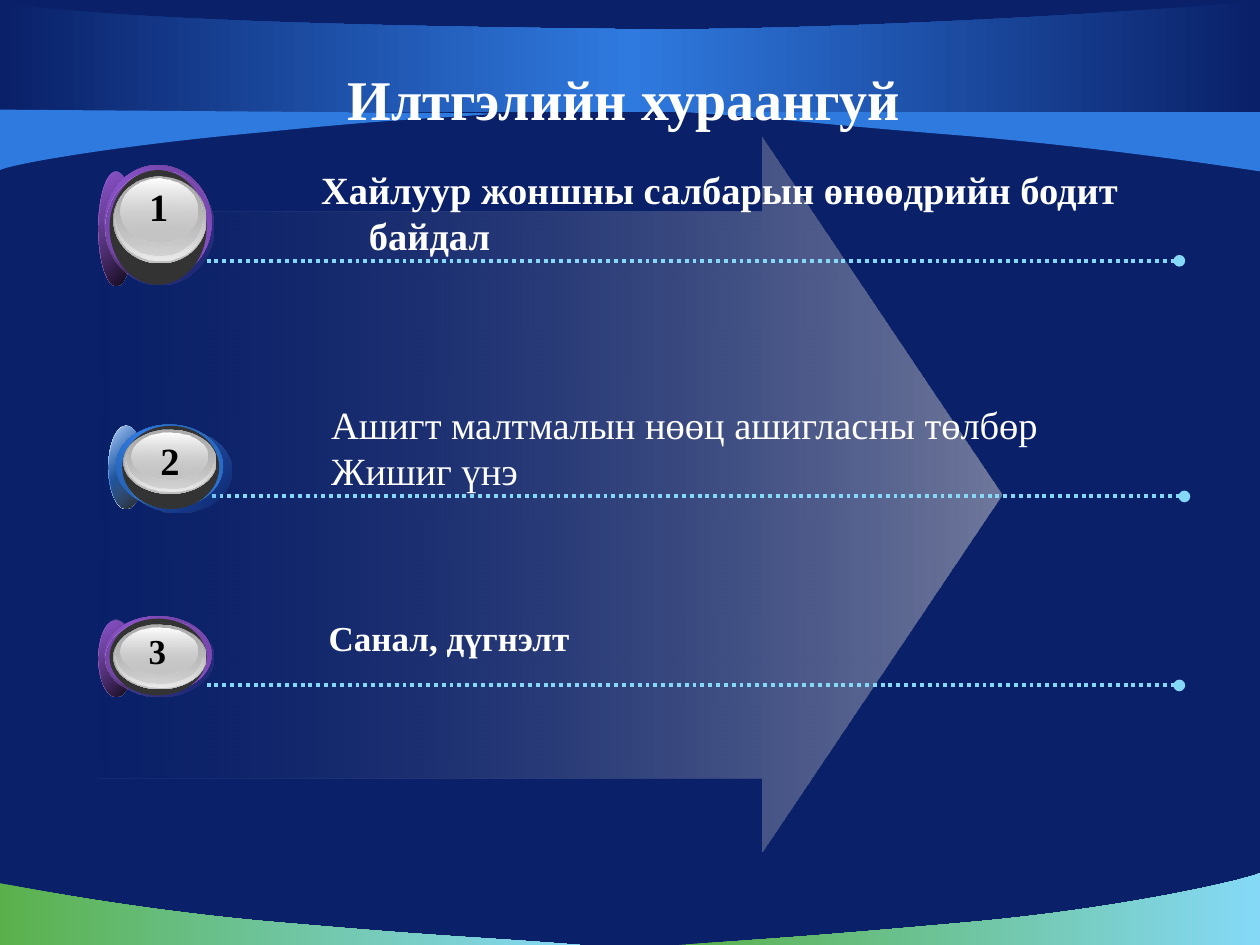
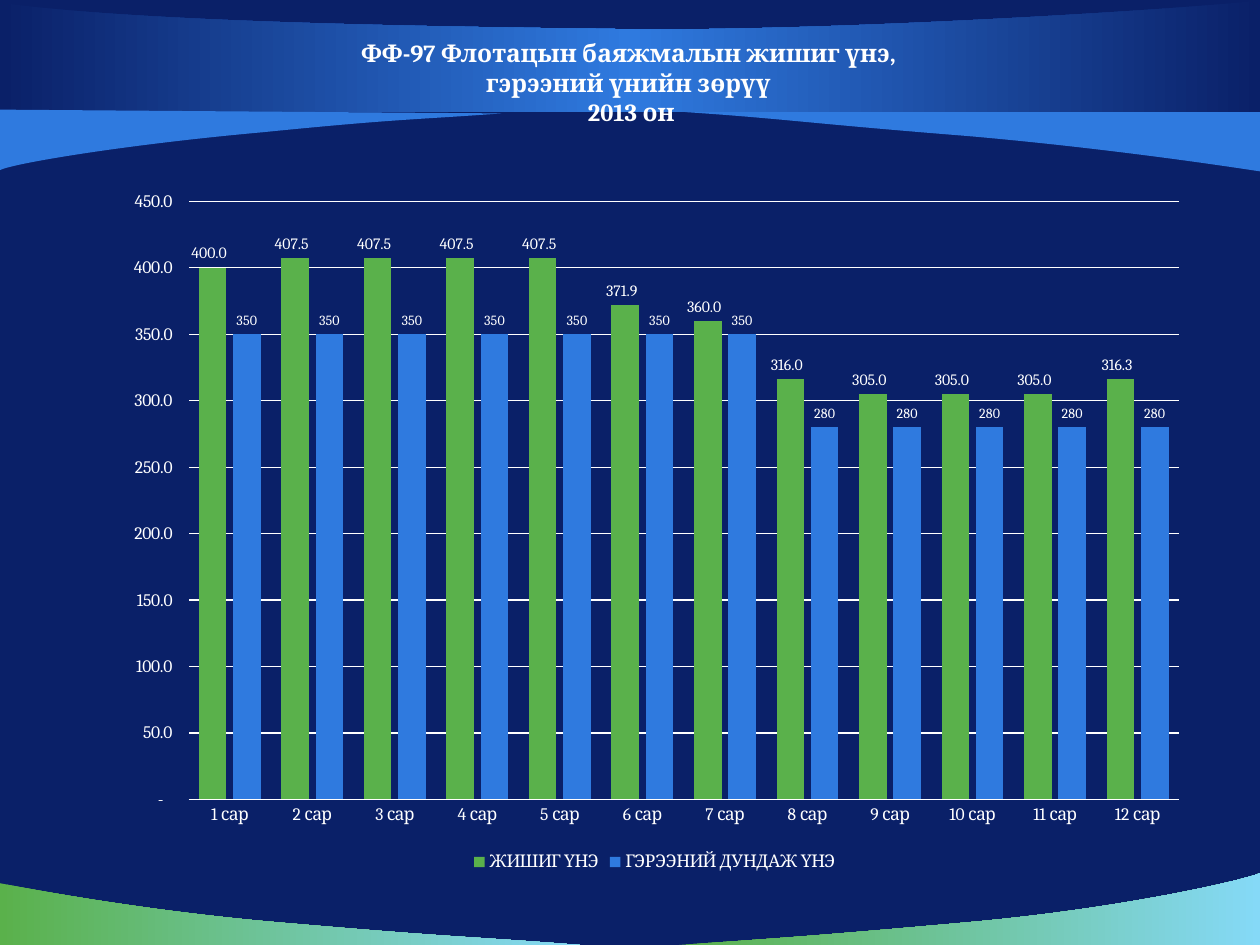
"""Build two slides: a three-step outline and a monthly price chart."""
from lxml import etree
from pptx import Presentation
from pptx import util as u
from pptx.chart import data as cd
from pptx.dml import color
from pptx.enum import chart as ch
from pptx.enum import dml, shapes, text
from pptx.oxml import ns

NAVY, BLUE, GREEN, SKY = "0A2068", "2F7ADF", "5AB14B", "85D9F7"
WHITE, BLACK, COAL = "FFFFFF", "000000", "333333"
PLUM, SILVER = "8A52C8", "C0C0C0"
SERIF, BOOK = "Times New Roman", "Cambria"

LEAF = [(0, GREEN), (100, SKY)]
SHEEN = [(0, NAVY), (50, BLUE), (100, NAVY)]
BANDS = [
    (LEAF, [(4.6, 7.5), (3.84, 7.44, 3.58, 7.44, 2.32, 7.33),
            (1.06, 7.23, 0.01, 7.01, 0, 7.01), (0, 7.5)]),
    (LEAF, [(5.39, 7.5), (6.14, 7.45, 6.46, 7.43, 7.69, 7.32),
            (8.92, 7.21, 9.9, 6.98, 10, 6.93), (10, 7.5)]),
    (BLUE, [(5.44, 0.89), (6.2, 0.94, 6.42, 0.98, 7.68, 1.08),
            (8.94, 1.19, 9.99, 1.36, 10, 1.36), (10, 0.88)]),
    (SHEEN, [(0, 0.89), (10, 0.89), (10, 0), (9.64, 0.06, 6.53, 0.26, 4.87, 0.23),
             (3.21, 0.21, 1.01, 0.17, 0, 0.02)]),
    (BLUE, [(3.98, 0.9), (3.31, 0.95, 3.18, 0.94, 2.08, 1.05),
            (0.97, 1.15, 0.09, 1.3, 0, 1.35), (0, 0.87)]),
]

PURPLE = {"edge": ([(0, PLUM), (100, "633B8F")], 90), "hue": PLUM,
          "rim": "6A3F99", "shade": "7143A4"}
AZURE = {"edge": ([(0, WHITE), (50, BLUE), (100, WHITE)], 45), "hue": BLUE,
         "rim": "245DAB", "shade": "2764B7"}

FACE = [
    (0.12, 0, 0.74, 1, [(0, "898989"), (100, SILVER)]),
    (0.13, 0, 0.72, 0.97, [(0, SILVER, 0), (100, "EBEBEB")]),
    (0.14, 0, 0.69, 0.91, [(0, "AEAEAE"), (100, SILVER, 48)]),
    (0.18, 0.02, 0.61, 0.73, [(0, WHITE), (100, SILVER, 38)]),
]

ROWS = [
    {"dots": (1.64, 2.07), "box": (1.95, 1.27, 7.81, 1.15), "hang": (0.88, -0.38),
     "lines": ["Хайлуур жоншны салбарын өнөөдрийн бодит байдал"], "size": 22, "bold": True,
     "ball": (0.78, 1.36, 0.91, 0.69), "tone": PURPLE,
     "rings": [(0.05, -0.05), (0.06, -0.01), (0.09, -0.01)], "drop": 0.04,
     "digit": (1.08, 1.4, 0.36, 0.65)},
    {"dots": (1.68, 3.94), "box": (2.03, 3.13, 7.47, 0.84), "hang": (0.5, 0),
     "lines": ["Ашигт малтмалын нөөц ашигласны төлбөр", "Жишиг үнэ"], "size": 22, "bold": False,
     "ball": (0.86, 3.38, 0.66, 0.51), "tone": AZURE,
     "rings": [(0.06, -0.01), (0.13, 0.03), (0.11, 0)], "drop": 0.03,
     "digit": (1.17, 3.42, 0.36, 0.47)},
    {"dots": (1.64, 5.44), "box": (2.01, 4.84, 6.99, 0.44), "hang": (0.88, -0.38),
     "lines": ["Санал, дүгнэлт"], "size": 20, "bold": True,
     "ball": (0.78, 4.92, 0.61, 0.51), "tone": PURPLE,
     "rings": [(0.05, -0.03), (0.06, 0), (0.09, -0.01)], "drop": 0.04,
     "digit": (1.08, 4.95, 0.34, 0.44)},
]

MONEY = '_-* #,##0.0_₮_-;\\-* #,##0.0_₮_-;_-* "-"?_₮_-;_-@_-'
SERIES = [
    ("ЖИШИГ ҮНЭ", [400] + [407.5] * 4 + [371.9, 360, 316] + [305] * 3 + [316.3],
     GREEN, 9, MONEY),
    ("ГЭРЭЭНИЙ ДУНДАЖ ҮНЭ", [350] * 7 + [280] * 5, BLUE, 8, "General"),
]


def rgb(code):
    """Turn a hex string into a colour."""
    return color.RGBColor.from_string(code)


def inch(*nums):
    """Turn numbers into lengths."""
    return [u.Inches(num) for num in nums]


def solid(fill, code):
    """Give a fill one colour."""
    fill.solid()
    fill.fore_color.rgb = rgb(code)


def blend(shape, stops, angle):
    """Give a shape a linear gradient of (place, colour, opacity) stops."""
    shape.fill.background()
    props = shape._element.spPr
    grad = etree.Element(ns.qn("a:gradFill"), rotWithShape="1")
    group = etree.SubElement(grad, ns.qn("a:gsLst"))
    for place, code, *alpha in stops:
        stop = etree.SubElement(group, ns.qn("a:gs"), pos=str(place * 1000))
        tint = etree.SubElement(stop, ns.qn("a:srgbClr"), val=code)
        if alpha:
            etree.SubElement(tint, ns.qn("a:alpha"), val=str(alpha[0] * 1000))
    etree.SubElement(grad, ns.qn("a:lin"), ang=str(angle * 60000), scaled="0")
    props.replace(props.find(ns.qn("a:noFill")), grad)


def paint(shape, look, angle=0):
    """Fill a shape with a colour or a gradient, without line or shadow."""
    if isinstance(look, str):
        solid(shape.fill, look)
    else:
        blend(shape, look, angle)
    shape.line.fill.background()
    shape.shadow.inherit = False


def bend(shape, line, move):
    """Turn a straight side of an outline into a cubic curve."""
    cubic = etree.Element(ns.qn("a:cubicBezTo"))
    for x, y in zip(inch(*move[::2]), inch(*move[1::2])):
        etree.SubElement(cubic, ns.qn("a:pt"), x=str(x - shape.left), y=str(y - shape.top))
    line.getparent().replace(line, cubic)


def band(slide, look, moves):
    """Draw one curved band of the frame."""
    pen = slide.shapes.build_freeform(*inch(*moves[0]))
    pen.add_line_segments([inch(*move[-2:]) for move in moves[1:]], close=True)
    shape = pen.convert_to_shape()
    sides = list(shape._element.iter(ns.qn("a:lnTo")))
    for line, move in zip(sides, moves[1:]):
        if len(move) == 6:
            bend(shape, line, move)
    paint(shape, look)


def style(font, face, size, code, bold=False):
    """Set the look of a font."""
    font.name, font.size, font.bold = face, u.Pt(size), bold
    font.color.rgb = rgb(code)


def write(home, place, lines, size, code=WHITE, face=SERIF, bold=True,
          center=False, middle=False, wrap=True, hang=None):
    """Add a text box; each line is a paragraph, or a list of broken lines."""
    frame = home.add_textbox(*inch(*place)).text_frame
    frame.word_wrap = wrap
    if middle:
        frame.vertical_anchor = text.MSO_ANCHOR.MIDDLE
    for num, line in enumerate(lines):
        para = frame.add_paragraph() if num else frame.paragraphs[0]
        if center:
            para.alignment = text.PP_ALIGN.CENTER
        if hang:
            props = para._p.get_or_add_pPr()
            props.set("marL", str(u.Inches(hang[0])))
            props.set("indent", str(u.Inches(hang[1])))
        for part, words in enumerate([line] if isinstance(line, str) else line):
            if part:
                para.add_line_break()
            run = para.add_run()
            run.text = words
            style(run.font, face, size, code, bold)


def disc(home, place, look, angle=90):
    """Draw one layer of a button."""
    paint(home.add_shape(shapes.MSO_SHAPE.OVAL, *inch(*place)), look, angle)


def button(home, row):
    """Draw the layered round button of a row."""
    left, top, tall, high = row["ball"]
    tone = row["tone"]
    hue = tone["hue"]
    disc(home, (left, top, 0.28, tall), *tone["edge"])
    disc(home, (left, top, 0.28, tall), [(0, hue, 32), (100, BLACK, 90)], 45)
    rings = [(0.85, [(0, tone["rim"]), (50, hue), (100, tone["rim"])], 315),
             (0.85, [(0, tone["shade"]), (100, hue, 0)], 45),
             (0.77, COAL, 0)]
    for (right, down), (wide, look, angle) in zip(row["rings"], rings):
        disc(home, (left + right, top + down, wide, tall), look, angle)
    for right, down, wide, scale, look in FACE:
        disc(home, (left + right, top + row["drop"] + down, wide, high * scale), look)


def dots(home, left, top):
    """Draw a dotted line that ends in a round dot."""
    line = home.add_connector(shapes.MSO_CONNECTOR.STRAIGHT,
                              *inch(left, top, left + 7.72, top))
    line.line.color.rgb = rgb(SKY)
    line.line.width = u.Pt(2.25)
    line.line.dash_style = dml.MSO_LINE.ROUND_DOT
    etree.SubElement(line.line._get_or_add_ln(), ns.qn("a:tailEnd"), type="oval")
    etree.SubElement(line._element.spPr, ns.qn("a:effectLst"))


def step(slide, num, row):
    """Draw one numbered row as a group."""
    home = slide.shapes.add_group_shape().shapes
    dots(home, *row["dots"])
    write(home, row["box"], row["lines"], row["size"], bold=row["bold"], hang=row["hang"])
    button(home, row)
    write(home, row["digit"], [str(num)], row["size"], BLACK, center=True, wrap=False)


def arrow(slide):
    """Draw the broad arrow behind the rows."""
    shape = slide.shapes.add_shape(shapes.MSO_SHAPE.RIGHT_ARROW, *inch(0.78, 1.09, 7.17, 5.67))
    shape.adjustments[0], shape.adjustments[1] = 0.793, 0.336
    paint(shape, [(0, NAVY, 15), (100, "B0B0BC", 61)])


def chart(slide):
    """Add the column chart of monthly prices."""
    data = cd.CategoryChartData()
    data.categories = [f"{month} сар" for month in range(1, 13)]
    for name, vals, *_ in SERIES:
        data.add_series(name, vals)
    graph = slide.shapes.add_chart(ch.XL_CHART_TYPE.COLUMN_CLUSTERED,
                                   *inch(0.86, 1.41, 8.67, 5.55), data).chart
    style(graph.font, BOOK, 10, WHITE)
    graph.has_title = False
    graph.has_legend = True
    graph.legend.position = ch.XL_LEGEND_POSITION.BOTTOM
    graph.legend.include_in_layout = False
    plot = graph.plots[0]
    plot.gap_width, plot.overlap, plot.vary_by_categories = 75, -25, False
    for series, (_, _, code, size, form) in zip(plot.series, SERIES):
        solid(series.format.fill, code)
        series.invert_if_negative = False
        tags = series.data_labels
        tags.show_value = True
        tags.position = ch.XL_LABEL_POSITION.OUTSIDE_END
        tags.number_format, tags.number_format_is_linked = form, False
        style(tags.font, BOOK, size, WHITE)
    axes(graph)


def axes(graph):
    """Style the two axes of a chart."""
    base, side = graph.category_axis, graph.value_axis
    for axis in (base, side):
        axis.major_tick_mark = axis.minor_tick_mark = ch.XL_TICK_MARK.NONE
    base.format.line.color.rgb = rgb(WHITE)
    side.format.line.fill.background()
    side.minimum_scale, side.maximum_scale, side.major_unit = 0, 450, 50
    side.has_major_gridlines = True
    side.major_gridlines.format.line.color.rgb = rgb(WHITE)
    side.major_gridlines.format.line.width = u.Pt(0.75)
    side.tick_labels.number_format = MONEY
    side.tick_labels.number_format_is_linked = False


def page(deck, place, title, size, face):
    """Add a slide with the shared ground, bands and title."""
    slide = deck.slides.add_slide(deck.slide_layouts[6])
    solid(slide.background.fill, NAVY)
    for look, moves in BANDS:
        band(slide, look, moves)
    write(slide.shapes, place, [title], size, face=face, center=True, middle=True)
    return slide


def main():
    """Build and save the deck."""
    deck = Presentation()
    deck.slide_width, deck.slide_height = inch(10, 7.5)
    outline = page(deck, (0.47, 0.47, 9.08, 0.62), "Илтгэлийн хураангуй ", 32, SERIF)
    arrow(outline)
    for num, row in enumerate(ROWS, 1):
        step(outline, num, row)
    heading = ["ФФ-97 Флотацын баяжмалын жишиг үнэ, ", "гэрээний үнийн зөрүү ", "2013 он"]
    prices = page(deck, (0.47, 0.27, 9.08, 0.77), heading, 14, BOOK)
    chart(prices)
    deck.save("out.pptx")


if __name__ == "__main__":
    main()
